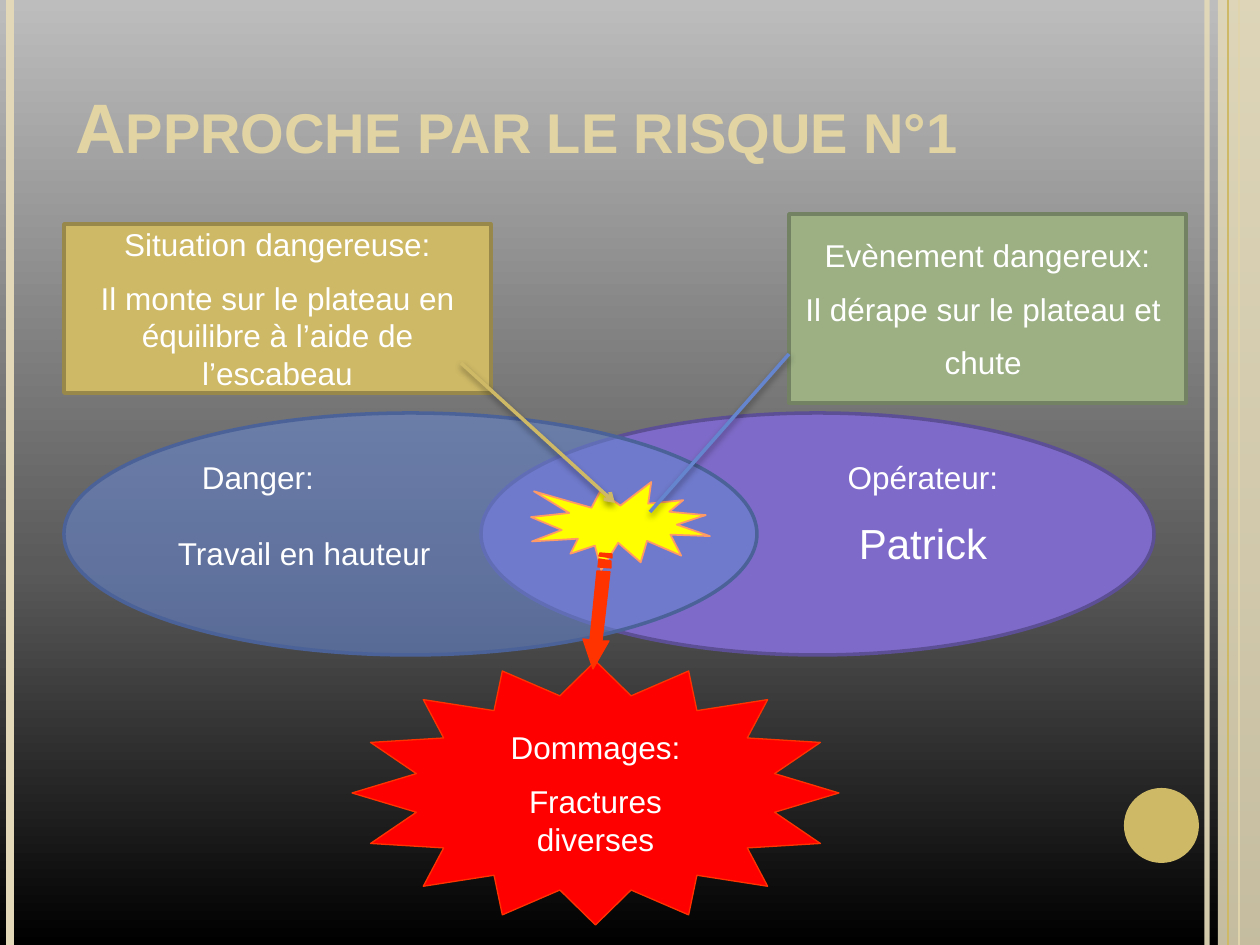
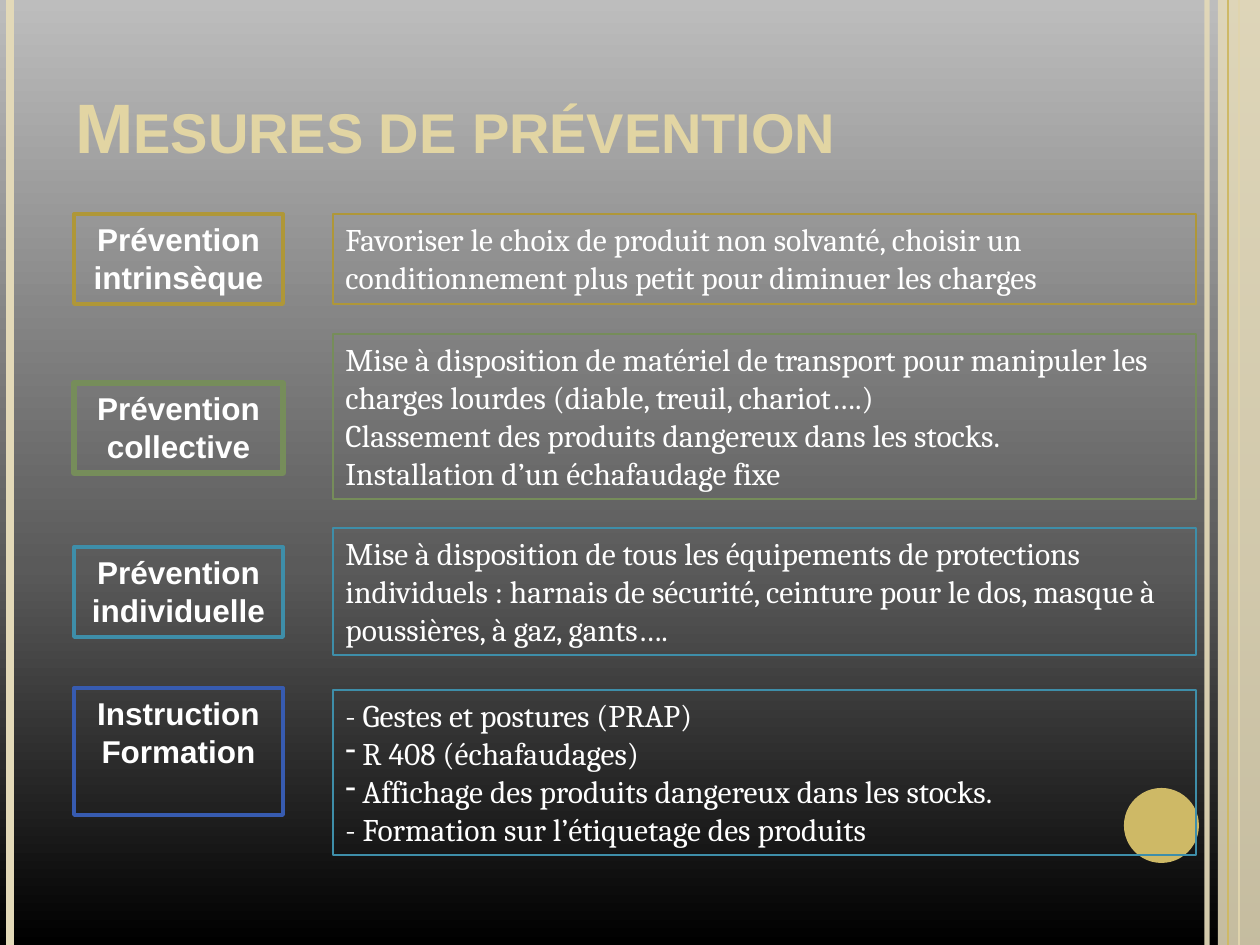
import copy
import pptx
import pptx.util
import pptx.dml.color
import pptx.enum.shapes
import pptx.enum.text
import pptx.oxml
import pptx.oxml.ns
from lxml import etree

KIND = pptx.enum.shapes.MSO_SHAPE
ALIGN = pptx.enum.text.PP_ALIGN
ANCHOR = pptx.enum.text.MSO_ANCHOR
qn = pptx.oxml.ns.qn

# Shared look
WIDE, HIGH = 1260, 945
SAND, GOLD, TITLE, WHITE = "E3D9B8", "CEB966", "E2D5A3", "FFFFFF"
OCHRE, GREEN, TEAL, BLUE = "AF9738", "768D5A", "3E8EA9", "375BB0"
FLAME = "FF3300"
SKY = [(0, "000000"), (0.4, "5A5A5A"), (1, "BDBDBD")]


def px(num):
    return pptx.util.Emu(round(num * 914400 / 126))


def hue(code):
    return pptx.dml.color.RGBColor.from_string(code)


def fade(part, rate):
    """Set the opacity, in percent, of the colours inside part."""
    for color in part.iter(qn("a:srgbClr")):
        etree.SubElement(color, qn("a:alpha")).set("val", str(rate * 1000))


def paint(shape, fill=None, edge=None, thick=2, rate=100):
    shape.shadow.inherit = False
    if fill:
        shape.fill.solid()
        shape.fill.fore_color.rgb = hue(fill)
        if rate < 100:
            fade(shape._element.spPr, rate)
    else:
        shape.fill.background()
    if edge:
        shape.line.color.rgb = hue(edge)
        shape.line.width = pptx.util.Pt(thick)
    else:
        shape.line.fill.background()
    return shape


def block(slide, kind, box, *look, **more):
    shape = slide.shapes.add_shape(kind, *map(px, box))
    return paint(shape, *look, **more)


def line(slide, start, end, color, thick, rate=100, arrow=False, shade=False):
    link = slide.shapes.add_connector(
        pptx.enum.shapes.MSO_CONNECTOR.STRAIGHT, *map(px, start + end))
    link.line.color.rgb = hue(color)
    link.line.width = pptx.util.Pt(thick)
    props = link._element.spPr
    if rate < 100:
        fade(props, rate)
    if arrow:
        etree.SubElement(props.find(qn("a:ln")), qn("a:tailEnd")).set("type", "arrow")
    effect = etree.SubElement(props, qn("a:effectLst"))
    if shade:
        drop = etree.SubElement(effect, qn("a:outerShdw"), blurRad="50800",
                                dist="25400", dir="5400000", rotWithShape="0")
        etree.SubElement(drop, qn("a:srgbClr"), val="000000")
        fade(drop, 40)


def label(slide, box):
    return slide.shapes.add_textbox(*map(px, box))


def setup(shape, anchor=ANCHOR.MIDDLE):
    frame = shape.text_frame
    frame.word_wrap = True
    frame.vertical_anchor = anchor
    return frame


def para(frame, text, size=18, font="Arial", color=WHITE, bold=False,
         align=ALIGN.CENTER, gap=0):
    item = frame.paragraphs[0]
    if item.runs:
        item = frame.add_paragraph()
    item.alignment = align
    item.space_before = pptx.util.Pt(gap)
    run = item.add_run()
    run.text = text
    run.font.size = pptx.util.Pt(size)
    run.font.name = font
    run.font.bold = bold
    run.font.color.rgb = hue(color)
    return item


def indent(item, left, first=0):
    props = item._p.get_or_add_pPr()
    props.set("marL", str(px(left)))
    props.set("indent", str(px(first)))
    return props


def stack(frame, texts):
    """Centred paragraphs set half a line apart."""
    for text in texts:
        para(frame, text, gap=9)


def page(deck, title):
    slide = deck.slides.add_slide(deck.slide_layouts[6])
    # Background
    fill = slide.background.fill
    fill.gradient()
    fill.gradient_angle = 90
    stops = slide._element.find(".//" + qn("a:gsLst"))
    stops.append(copy.deepcopy(stops[0]))
    for stop, (spot, color) in zip(fill.gradient_stops, SKY):
        stop.position = spot
        stop.color.rgb = hue(color)
    # Side bands and disc
    def rule(left, *look):
        line(slide, (left, 0), (left, HIGH), *look)
    rule(1207, SAND, 3, 93)
    rule(10, SAND, 4.5)
    rule(1239, GOLD, 1.5)
    block(slide, KIND.RECTANGLE, (1218, 0, 42, HIGH), SAND, rate=87)
    rule(1228, GOLD, 0.75)
    block(slide, KIND.OVAL, (1124, 788, 75, 75), GOLD)
    # Title
    frame = setup(label(slide, (63, 16, 1029, 158)), ANCHOR.BOTTOM)
    item = para(frame, title, 40, color=TITLE, bold=True, align=ALIGN.LEFT)
    item.runs[0].font._element.set("cap", "small")
    return slide


def arrow(slide):
    """Striped arrow from the accident down to the damage."""
    tip = [(609, 641), (602, 641), (610, 572), (597, 571),
           (590, 640), (583, 639), (593, 669)]
    bars = [[(611, 561), (599, 559), (598, 567), (611, 568)],
            [(612, 554), (600, 553), (599, 556), (612, 558)]]
    pen = slide.shapes.build_freeform(*tip[0], scale=px(1))
    pen.add_line_segments(tip[1:])
    for bar in bars:
        pen.move_to(*bar[0])
        pen.add_line_segments(bar[1:])
    paint(pen.convert_to_shape(), FLAME, FLAME, 0.75)


def risk(deck):
    slide = page(deck, "Approche par le risque n°1")
    # Causes and the two overlapping fields
    block(slide, KIND.OVAL, (481, 413, 673, 242), "7E6BC9", "5D4F95")
    state = block(slide, KIND.RECTANGLE, (64, 224, 427, 169), GOLD, "98894B")
    stack(setup(state), ["Situation dangereuse:",
                         "Il monte sur le plateau en équilibre à l’aide de l’escabeau"])
    event = block(slide, KIND.RECTANGLE, (789, 214, 397, 189), "9CB084", "738262")
    stack(setup(event), ["Evènement dangereux:", "Il dérape sur le plateau et ", "chute "])

    danger = block(slide, KIND.OVAL, (64, 413, 693, 242), "6585CF", "4B6299", rate=58)
    frame = setup(danger)
    frame.margin_bottom = px(44)
    indent(para(frame, "Danger:", align=ALIGN.LEFT), 24)
    para(frame, "Travail en hauteur", align=ALIGN.LEFT, gap=22)

    block(slide, KIND.EXPLOSION1, (531, 482, 179, 88), "FFFF00", "FF9966", 1)
    frame = setup(label(slide, (799, 452, 248, 131)), ANCHOR.TOP)
    para(frame, "Opérateur:", gap=9)
    para(frame, "Patrick", 24, gap=12)

    # Damage
    harm = block(slide, KIND.STAR_16_POINT, (352, 661, 487, 264), "FF0000", FLAME, 0.75)
    harm.adjustments[0] = 0.375
    frame = setup(harm)
    frame.margin_left = frame.margin_right = frame.margin_top = frame.margin_bottom = 0
    stack(frame, ["Dommages:", "Fractures diverses"])

    # Links
    arrow(slide)
    line(slide, (461, 363), (615, 503), GOLD, 2, arrow=True, shade=True)
    line(slide, (650, 512), (789, 354), "6585CF", 2, shade=True)


def measure(slide, name, body, tag, text):
    """One kind of prevention: name box at left, measures at right."""
    top, tall, edge, thick = tag
    box = block(slide, KIND.RECTANGLE, (74, top, 209, tall), None, edge, thick)
    frame = setup(box, ANCHOR.TOP)
    for word in name:
        para(frame, word, bold=True)
    top, tall, edge = body
    box = block(slide, KIND.RECTANGLE, (333, top, 863, tall), None, edge, 1.5)
    frame = setup(box, ANCHOR.TOP)
    for row in text:
        dash = row.startswith("•")
        item = para(frame, row.lstrip("•"), font="Cambria", align=ALIGN.LEFT)
        if dash:
            props = indent(item, 17, -17)
            etree.SubElement(props, qn("a:buChar")).set("char", "-")


def prevent(deck):
    slide = page(deck, "Mesures de prévention")
    rows = [
        (["Prévention intrinsèque"], (214, 90, OCHRE), (214, 90, OCHRE, 2.25),
         ["Favoriser le choix de produit non solvanté, choisir un "
          "conditionnement plus petit pour diminuer les charges"]),
        (["Prévention collective"], (334, 165, GREEN), (383, 90, GREEN, 3),
         ["Mise à disposition de matériel de transport pour manipuler les "
          "charges lourdes (diable, treuil, chariot….)",
          "Classement des produits dangereux dans les stocks.",
          "Installation d’un échafaudage fixe"]),
        (["Prévention individuelle"], (528, 127, TEAL), (547, 90, TEAL, 2.25),
         ["Mise à disposition de tous les équipements de protections "
          "individuels : harnais de sécurité, ceinture pour le dos, masque à "
          "poussières, à gaz, gants…."]),
        (["Instruction", "Formation"], (690, 165, TEAL), (688, 127, BLUE, 2.25),
         ["- Gestes et postures (PRAP)",
          "•R 408 (échafaudages)",
          "•Affichage des produits dangereux dans les stocks.",
          "- Formation sur l’étiquetage des produits"]),
    ]
    for row in rows:
        measure(slide, *row)


def main():
    deck = pptx.Presentation()
    deck.slide_width, deck.slide_height = px(WIDE), px(HIGH)
    risk(deck)
    prevent(deck)
    deck.save("out.pptx")


if __name__ == "__main__":
    main()
